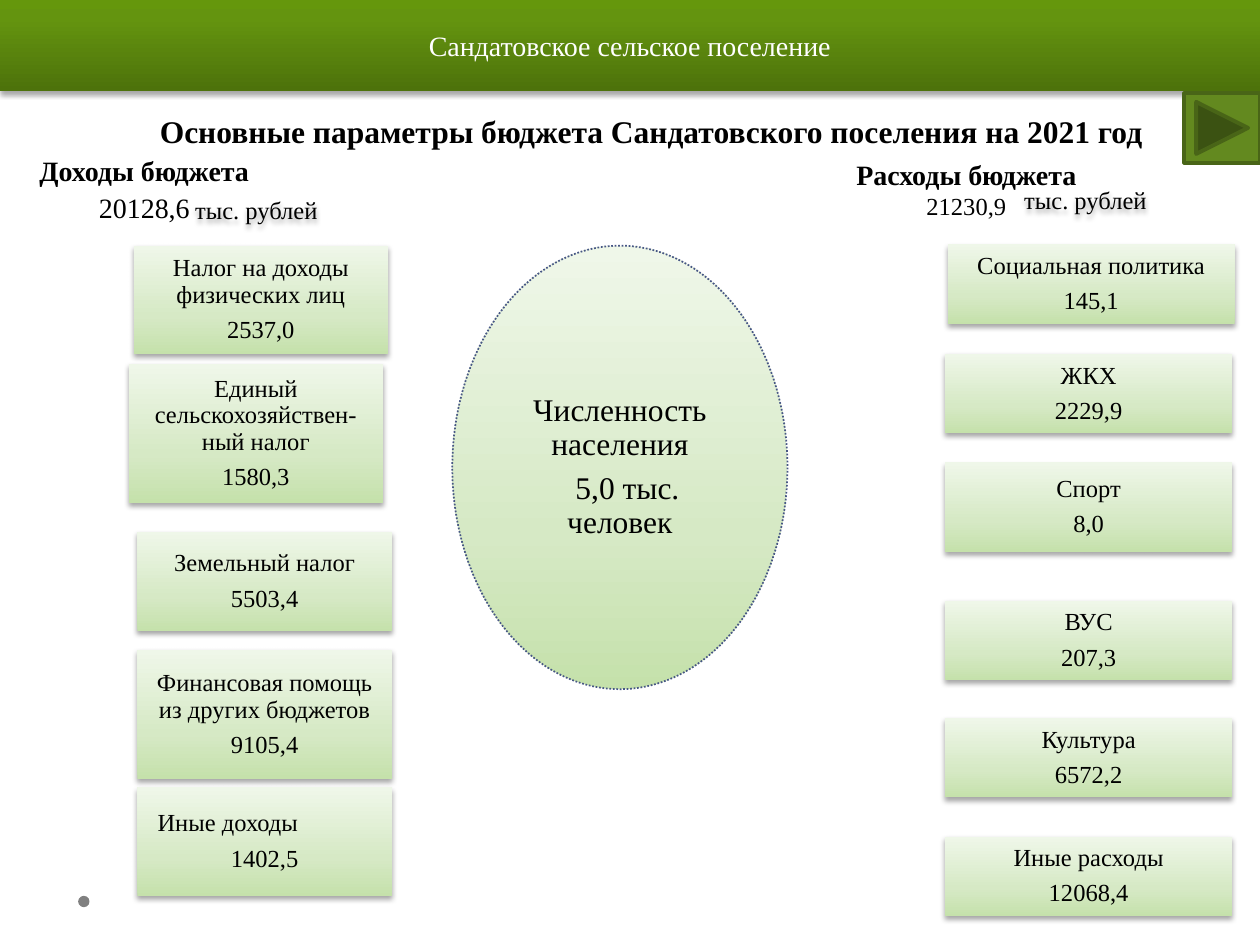
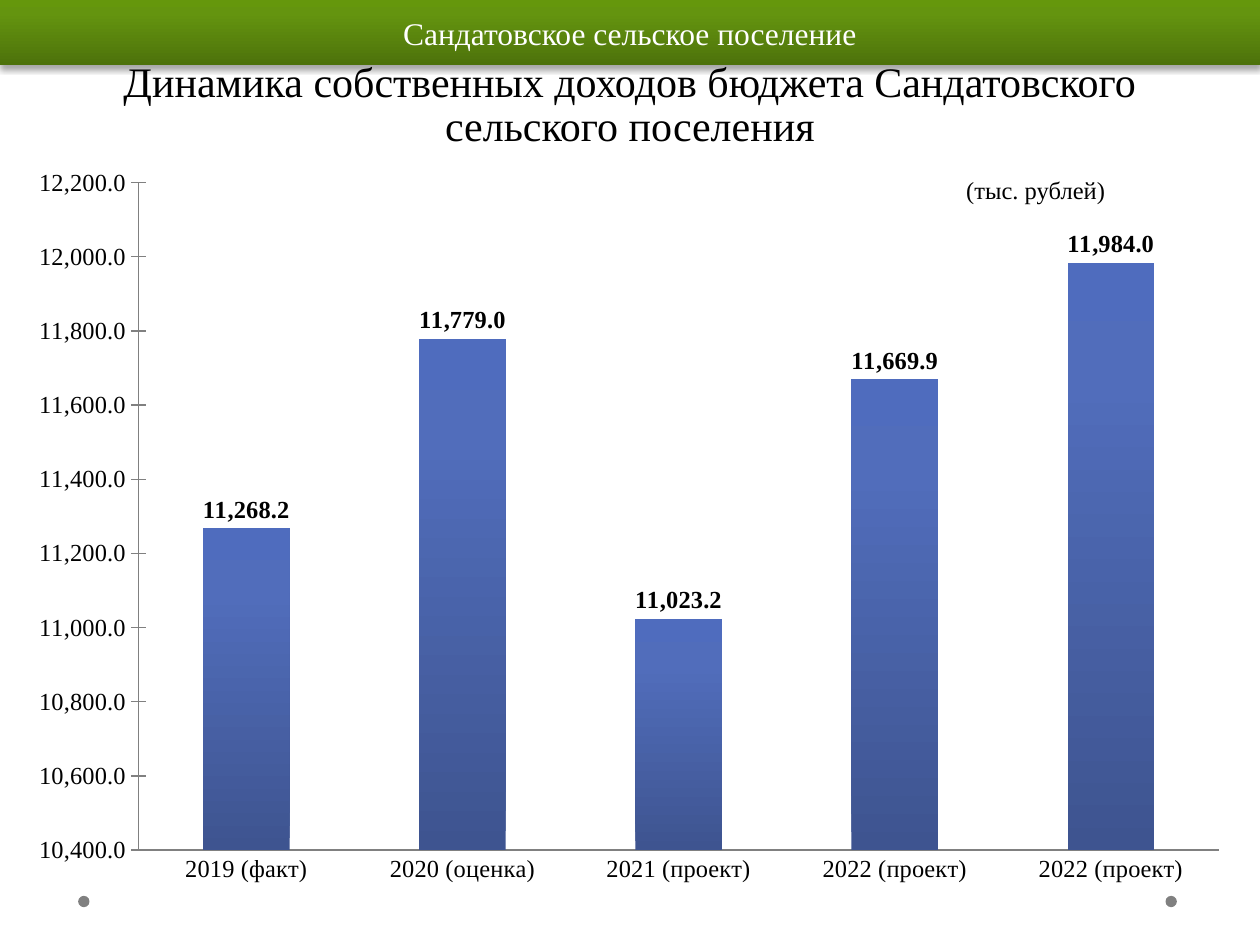
from dataclasses import dataclass

from lxml.etree import SubElement
from pptx import Presentation
from pptx.chart.data import CategoryChartData
from pptx.dml.color import RGBColor
from pptx.enum.chart import XL_CHART_TYPE, XL_LABEL_POSITION, XL_TICK_MARK
from pptx.enum.dml import MSO_LINE
from pptx.enum.shapes import MSO_SHAPE
from pptx.enum.text import MSO_ANCHOR, PP_ALIGN
from pptx.oxml.ns import qn
from pptx.util import Emu, Inches, Pt

SLIDE_WIDTH, SLIDE_HEIGHT = Inches(10), Inches(7.5)
COLUMNS, ROWS = 100, 75


@dataclass(frozen=True)
class Theme:
    font: str = "Times New Roman"
    text: str = "000000"
    light_text: str = "FFFFFF"
    dot: str = "808080"
    axis: str = "808080"
    button: str = "63891F"
    button_line: str = "496517"
    circle_line: str = "475785"
    band: tuple = ((0, "4D720B"), (80, "64940F"), (100, "65970C"))
    card: tuple = ((0, "C5E1AB"), (35, "D6E9C5"), (100, "EFF7E9"))
    bars: tuple = ((0, "3E5490"), (80, "516DBB"), (100, "4F6CBE"))
    small: int = 14
    medium: int = 16
    large: int = 18
    headline: int = 24


THEME = Theme()


@dataclass(frozen=True)
class Box:
    """An area in grid columns and rows."""
    left: float
    top: float
    width: float
    height: float

    def area(self, left, top, width, height):
        return Box(self.left + left, self.top + top, width, height)

    def lengths(self):
        column, row = SLIDE_WIDTH / COLUMNS, SLIDE_HEIGHT / ROWS
        return [Emu(round(length)) for length in
                (self.left * column, self.top * row,
                 self.width * column, self.height * row)]


PAGE = Box(0, 0, COLUMNS, ROWS)
CARD_TEXT = {"line_spacing": 0.9, "space_after": Pt(5)}
CARD_INSETS = (0.07, 0.07, 0.07, 0.07)
TITLE_INSETS = (0.1, 0.02, 0.1, 0.05)


def set_values(target, values):
    for name, value in values.items():
        setattr(target, name, value)


def style_font(font, size, color=THEME.text, bold=False):
    set_values(font, {"name": THEME.font, "size": Pt(size), "bold": bold})
    font.color.rgb = RGBColor.from_string(color)


def set_gradient(fill, properties, stops):
    fill.gradient()
    fill.gradient_angle = 90
    stop_list = properties.find(".//" + qn("a:gsLst"))
    for stop in list(stop_list):
        stop_list.remove(stop)
    for position, color in stops:
        stop = SubElement(stop_list, qn("a:gs"), pos=str(position * 1000))
        SubElement(stop, qn("a:srgbClr"), val=color)


def add_shadow(shape):
    shape.shadow.inherit = False
    effects = shape._element.spPr.find(qn("a:effectLst"))
    shadow = SubElement(effects, qn("a:outerShdw"), blurRad=str(Pt(3.1)),
                        dist=str(Pt(1.8)), dir="5400000", rotWithShape="0")
    color = SubElement(shadow, qn("a:srgbClr"), val="000000")
    SubElement(color, qn("a:alpha"), val="35000")


def write(shape, lines, size, color=THEME.text, bold=False, insets=None,
          anchor=MSO_ANCHOR.MIDDLE, shared=None):
    """Fill a shape with lines, each a string or a (string, overrides) pair."""
    frame = shape.text_frame
    set_values(frame, {"word_wrap": True, "vertical_anchor": anchor})
    if insets:
        sides = ("margin_left", "margin_top", "margin_right", "margin_bottom")
        set_values(frame, dict(zip(sides, map(Inches, insets))))
    for index, line in enumerate(lines):
        text, changes = (line, {}) if isinstance(line, str) else line
        values = {"alignment": PP_ALIGN.CENTER, **(shared or {}), **changes}
        font = {"size": values.pop("size", size), "bold": values.pop("bold", bold)}
        indent = values.pop("indent", 0)
        paragraph = frame.paragraphs[0] if index == 0 else frame.add_paragraph()
        if indent:
            paragraph._p.get_or_add_pPr().set("indent", str(Inches(indent)))
        set_values(paragraph, values)
        run = paragraph.add_run()
        run.text = text
        style_font(run.font, color=color, **font)


def add_shape(slide, preset, box, color=None, stops=None):
    shape = slide.shapes.add_shape(preset, *box.lengths())
    shape.shadow.inherit = False
    shape.line.fill.background()
    if stops:
        set_gradient(shape.fill, shape._element.spPr, stops)
    else:
        shape.fill.solid()
        shape.fill.fore_color.rgb = RGBColor.from_string(color)
    return shape


def outline(shape, color, width):
    shape.line.color.rgb = RGBColor.from_string(color)
    shape.line.width = Pt(width)


def add_text(slide, box, lines, size, **options):
    shape = slide.shapes.add_textbox(*box.lengths())
    write(shape, lines, size, **options)
    return shape


def add_title(slide, box, text, size, spacing, **options):
    add_text(slide, box, [text], size, anchor=MSO_ANCHOR.BOTTOM,
             shared={"line_spacing": Pt(spacing)}, **options)


def add_band(slide, height, size):
    band = add_shape(slide, MSO_SHAPE.RECTANGLE,
                     PAGE.area(0, 0, COLUMNS, height), stops=THEME.band)
    add_shadow(band)
    write(band, ["Сандатовское сельское поселение"], size, THEME.light_text)


def add_dots(slide, lefts):
    for left in lefts:
        add_shape(slide, MSO_SHAPE.OVAL, PAGE.area(left, 71.1, 0.9, 0.9), THEME.dot)


def add_unit(slide, box):
    add_shadow(add_text(slide, box, ["тыс. рублей"], THEME.small,
                        insets=CARD_INSETS, shared=CARD_TEXT))


def add_cards(slide, box, cards):
    """Cards are (left, top, height, name, amount), measured from the box."""
    for left, top, height, name, amount in cards:
        card = add_shape(slide, MSO_SHAPE.RECTANGLE,
                         box.area(left, top, box.width, height), stops=THEME.card)
        add_shadow(card)
        write(card, [name, amount], THEME.small,
              insets=CARD_INSETS, shared=CARD_TEXT)


def add_income(slide, box):
    add_text(slide, box.area(0, 0, 20.5, 6.2),
             ["Доходы бюджета",
              ("20128,6", {"bold": False, "indent": -0.12, "space_before": Pt(4)})],
             THEME.medium, bold=True, insets=TITLE_INSETS,
             anchor=MSO_ANCHOR.TOP, shared={"line_spacing": 0.9})
    add_unit(slide, box.area(12.6, 2.9, 13.1, 3.2))
    other = ("Иные доходы", {"alignment": PP_ALIGN.LEFT, "indent": 0.09})
    add_cards(slide, box.area(9, 7.2, 20.2, 51.6), [
        (0.4, 0, 8.6, "Налог на доходы физических лиц", "2537,0"),
        (0, 9.4, 11, "Единый сельскохозяйствен-ный налог", "1580,3"),
        (0.7, 22.7, 7.9, "Земельный налог", "5503,4"),
        (0.7, 32.1, 10.2, "Финансовая помощь из других бюджетов", "9105,4"),
        (0.7, 43, 8.6, other, "1402,5"),
    ])


def add_spending(slide, box):
    add_text(slide, box.area(0, 0, 22, 6.2),
             ["Расходы бюджета", ("21230,9", {"size": THEME.small, "bold": False})],
             THEME.medium, bold=True, insets=(0, 0.02, 0, 0), anchor=MSO_ANCHOR.TOP)
    add_unit(slide, box.area(13.9, 2.1, 13.1, 3.2))
    add_cards(slide, box.area(9.3, 7.1, 22.8, 53.3), [
        (0.2, 0, 6.3, "Социальная политика", "145,1"),
        (0, 8.7, 6.3, "ЖКХ", "2229,9"),
        (0, 17.3, 7.1, "Спорт", "8,0"),
        (0, 28.3, 6.3, "ВУС", "207,3"),
        (0, 37.6, 6.3, "Культура", "6572,2"),
        (0, 47, 6.3, "Иные расходы", "12068,4"),
    ])


def add_population(slide, box):
    circle = add_shape(slide, MSO_SHAPE.OVAL, box, stops=THEME.card)
    outline(circle, THEME.circle_line, 1)
    circle.line.dash_style = MSO_LINE.ROUND_DOT
    write(circle, ["Численность населения", ("5,0 тыс. человек", {"indent": 0.12})],
          THEME.large, shared={"line_spacing": 0.9, "space_after": Pt(6)})


def add_next_button(slide, box):
    button = add_shape(slide, MSO_SHAPE.ACTION_BUTTON_FORWARD_OR_NEXT, box, THEME.button)
    outline(button, THEME.button_line, 2.25)


def build_budget_slide(slide):
    add_dots(slide, [6.2])
    add_title(slide, PAGE.area(6.7, 7.2, 90, 5.2),
              "Основные параметры бюджета Сандатовского поселения на 2021 год",
              THEME.large, 28, bold=True, insets=TITLE_INSETS)
    add_band(slide, 7.2, THEME.medium)
    add_income(slide, PAGE.area(1.2, 12.3, 30, 59))
    add_spending(slide, PAGE.area(65.7, 12.3, 33, 61))
    add_next_button(slide, PAGE.area(94, 7.4, 6, 5.5))
    add_population(slide, PAGE.area(35.9, 19.5, 26.6, 35.2))


def set_plot_area(chart, **shares):
    plot_area = chart._chartSpace.chart.plotArea
    layout = plot_area.find(qn("c:layout"))
    if layout is None:
        layout = SubElement(plot_area, qn("c:layout"))
        plot_area.insert(0, layout)
    manual = SubElement(layout, qn("c:manualLayout"))
    values = {"layoutTarget": "inner", "xMode": "edge", "yMode": "edge", **shares}
    for name, value in values.items():
        SubElement(manual, qn("c:" + name), val=str(value))


def add_revenue_chart(slide, box):
    number_format = "#,##0.0"
    data = CategoryChartData(number_format=number_format)
    data.categories = ["2019 (факт)", "2020 (оценка)", "2021 (проект)",
                       "2022 (проект)", "2022 (проект)"]
    data.add_series("", [11268.2, 11779, 11023.2, 11669.9, 11984])
    chart = slide.shapes.add_chart(XL_CHART_TYPE.COLUMN_CLUSTERED,
                                   *box.lengths(), data).chart
    set_values(chart, {"has_legend": False, "has_title": False})
    style_font(chart.font, THEME.small)
    set_plot_area(chart, x=0.08, y=0.02, w=0.92, h=0.88)

    set_values(chart.value_axis, {
        "minimum_scale": 10400, "maximum_scale": 12200, "major_unit": 200,
        "has_major_gridlines": False, "major_tick_mark": XL_TICK_MARK.CROSS})
    chart.category_axis.major_tick_mark = XL_TICK_MARK.NONE
    for axis in (chart.value_axis, chart.category_axis):
        style_font(axis.tick_labels.font, THEME.small)
        axis.format.line.color.rgb = RGBColor.from_string(THEME.axis)

    plot = chart.plots[0]
    set_values(plot, {"gap_width": 150, "vary_by_categories": False,
                      "has_data_labels": True})
    label_format = {"number_format": number_format, "number_format_is_linked": False}
    set_values(chart.value_axis.tick_labels, label_format)
    set_values(plot.data_labels, {**label_format, "show_value": True,
                                  "position": XL_LABEL_POSITION.OUTSIDE_END})
    style_font(plot.data_labels.font, THEME.small, bold=True)
    series = plot.series[0]
    set_gradient(series.format.fill, series._element, THEME.bars)


def build_revenue_slide(slide):
    add_dots(slide, [6.2, 92.5])
    add_title(slide, PAGE.area(5, 7.2, 90, 5.2),
              "Динамика собственных доходов бюджета Сандатовского сельского поселения",
              THEME.headline, 25)
    add_revenue_chart(slide, PAGE.area(3.1, 13.3, 93.7, 60.2))
    add_text(slide, PAGE.area(75.7, 13.4, 14.8, 3.3), ["(тыс. рублей)"], THEME.small,
             anchor=MSO_ANCHOR.TOP, shared={"alignment": PP_ALIGN.LEFT})
    add_band(slide, 5.2, THEME.large)


def main():
    presentation = Presentation()
    set_values(presentation, {"slide_width": SLIDE_WIDTH, "slide_height": SLIDE_HEIGHT})
    blank = presentation.slide_layouts[6]
    for build in (build_budget_slide, build_revenue_slide):
        build(presentation.slides.add_slide(blank))
    presentation.save("out.pptx")


if __name__ == "__main__":
    main()
